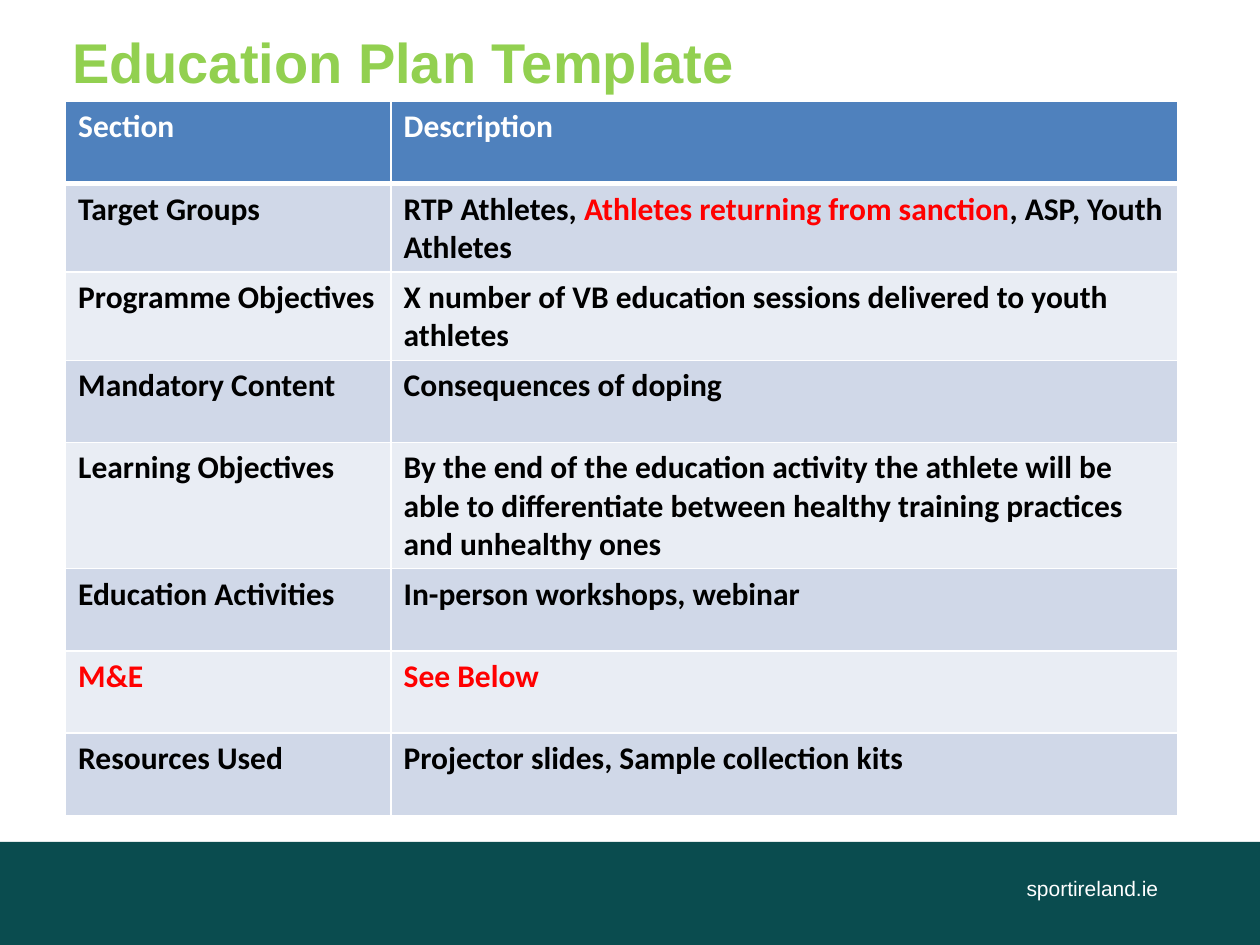
from lxml import etree
from pptx import Presentation
from pptx.dml.color import RGBColor
from pptx.enum.shapes import MSO_SHAPE
from pptx.enum.text import MSO_ANCHOR, PP_ALIGN
from pptx.oxml.ns import qn
from pptx.util import Pt

RECTANGLE = MSO_SHAPE.RECTANGLE
TOP = MSO_ANCHOR.TOP
LEFT = PP_ALIGN.LEFT

WHITE = RGBColor(0xFF, 0xFF, 0xFF)
BLACK = RGBColor(0x00, 0x00, 0x00)
RED = RGBColor(0xFF, 0x00, 0x00)
GREEN = RGBColor(0x92, 0xD0, 0x50)
TEAL = RGBColor(0x0A, 0x4C, 0x4F)
BLUE = RGBColor(0x4F, 0x81, 0xBD)
BANDS = (RGBColor(0xE9, 0xED, 0xF4), RGBColor(0xD0, 0xD8, 0xE8))

TITLE_ONLY = 5
COLUMN_WIDTHS = (186, 449.5)

# Each row: height, colour of the text, section, spans of the description
ROWS = [
    (47, WHITE, "Section", [("Description", WHITE)]),
    (50.5, BLACK, "Target Groups", [
        ("RTP Athletes, ", BLACK),
        ("Athletes returning from sanction", RED),
        (", ASP, Youth Athletes", BLACK)]),
    (50.5, BLACK, "Programme Objectives", [
        ("X number of VB education sessions delivered to youth athletes", BLACK)]),
    (47, BLACK, "Mandatory Content", [("Consequences of doping", BLACK)]),
    (72, BLACK, "Learning Objectives", [
        ("By the end of the education activity the athlete will be able to "
         "differentiate between healthy training practices and unhealthy ones", BLACK)]),
    (47, BLACK, "Education Activities", [("In-person workshops, webinar", BLACK)]),
    (47, RED, "M&E", [("See Below", RED)]),
    (47, BLACK, "Resources Used", [
        ("Projector slides, Sample collection kits", BLACK)]),
]


class SlideBuilder:
    heading_font = "Arial"
    table_font = "Calibri"

    def __init__(self, page):
        self.page = page

    def fill_para(self, para, spans, name, size, bold=False):
        """Fill a paragraph with (text, colour) spans in one font."""
        para.alignment = LEFT
        for text, colour in spans:
            span = para.add_run()
            span.text = text
            span.font.color.rgb = colour
        font = para.font
        font.name, font.size, font.bold = name, Pt(size), bold

    def title(self, text, left, top, width, height):
        box = self.page.shapes.title
        box.left, box.top, box.width, box.height = map(Pt, (left, top, width, height))
        frame = box.text_frame
        frame.vertical_anchor = TOP
        frame.margin_top = Pt(7)
        self.fill_para(frame.paragraphs[0], [(text, GREEN)], self.heading_font, 32, True)

    def bar(self, left, top, width, height, colour):
        bar = self.page.shapes.add_shape(RECTANGLE, *map(Pt, (left, top, width, height)))
        bar.shadow.inherit = False
        bar.fill.solid()
        bar.fill.fore_color.rgb = colour
        bar.line.fill.background()

    def label(self, text, left, top, width, height, size, colour):
        box = self.page.shapes.add_textbox(*map(Pt, (left, top, width, height)))
        box.text_frame.word_wrap = True
        self.fill_para(box.text_frame.paragraphs[0], [(text, colour)],
                       self.heading_font, size)

    def borders(self, cell, top, bottom):
        """Draw white borders; they come before the fill in the cell properties."""
        properties = cell._tc.get_or_add_tcPr()
        widths = {"a:lnL": 1, "a:lnR": 1, "a:lnT": top, "a:lnB": bottom}
        for index, (tag, width) in enumerate(widths.items()):
            line = etree.Element(qn(tag), w=str(Pt(width)))
            fill = etree.SubElement(line, qn("a:solidFill"))
            etree.SubElement(fill, qn("a:srgbClr"), val=str(WHITE))
            properties.insert(index, line)

    def table(self, rows, left, top, widths):
        height = sum(row[0] for row in rows)
        table = self.page.shapes.add_table(
            len(rows), len(widths), Pt(left), Pt(top), Pt(sum(widths)), Pt(height)).table
        for column, width in zip(table.columns, widths):
            column.width = Pt(width)
        for number, (row_height, colour, section, description) in enumerate(rows):
            table.rows[number].height = Pt(row_height)
            for cell, spans in zip(table.rows[number].cells,
                                   ([(section, colour)], description)):
                cell.fill.solid()
                cell.fill.fore_color.rgb = BANDS[number % 2] if number else BLUE
                self.borders(cell, 3 if number == 1 else 1, 1 if number else 3)
                self.fill_para(cell.text_frame.paragraphs[0], spans,
                               self.table_font, 18, True)


def main():
    deck = Presentation()
    deck.slide_width, deck.slide_height = Pt(720), Pt(540)
    builder = SlideBuilder(deck.slides.add_slide(deck.slide_layouts[TITLE_ONLY]))

    # Footer
    builder.bar(0, 481, 720, 59, TEAL)
    builder.label("sportireland.ie", 579.5, 497, 121, 29, 12, WHITE)

    # Title and plan
    builder.title("Education Plan Template", 34, 8.5, 658, 65)
    builder.table(ROWS, 37.5, 58, COLUMN_WIDTHS)

    deck.save("out.pptx")


if __name__ == "__main__":
    main()
